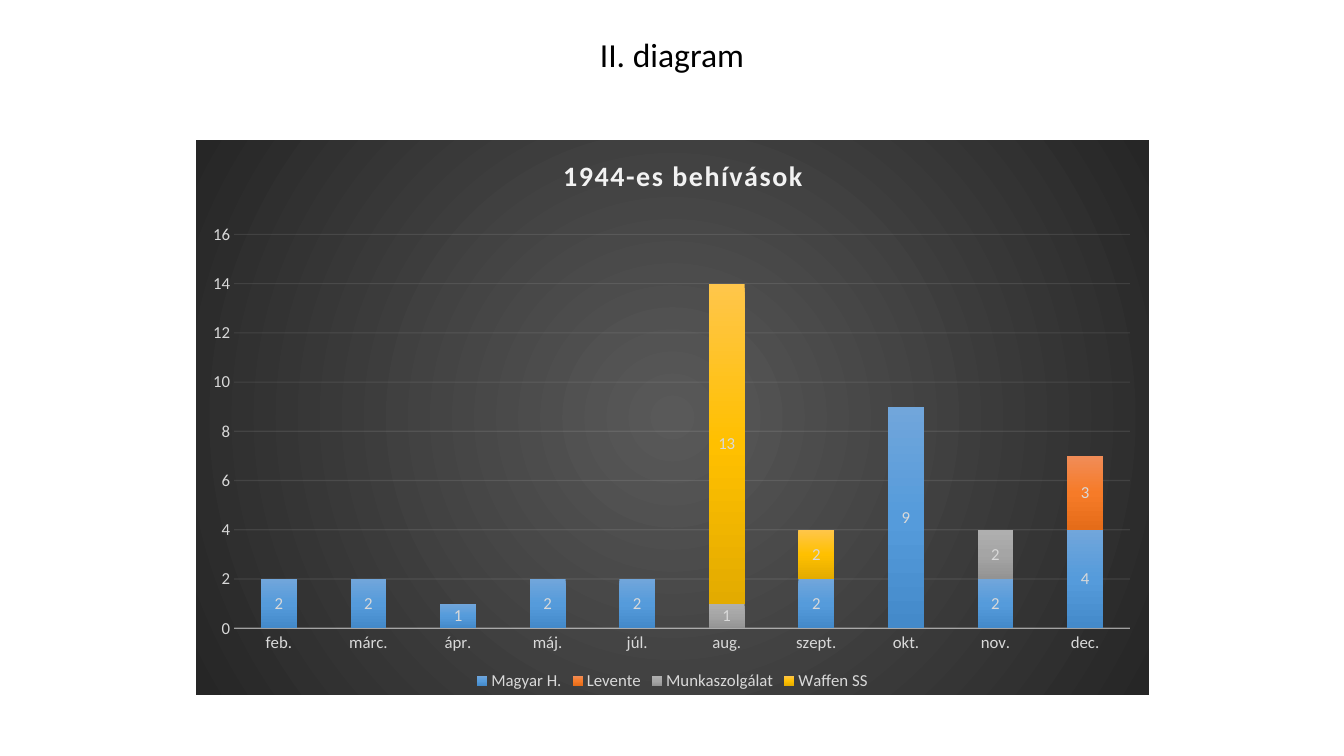
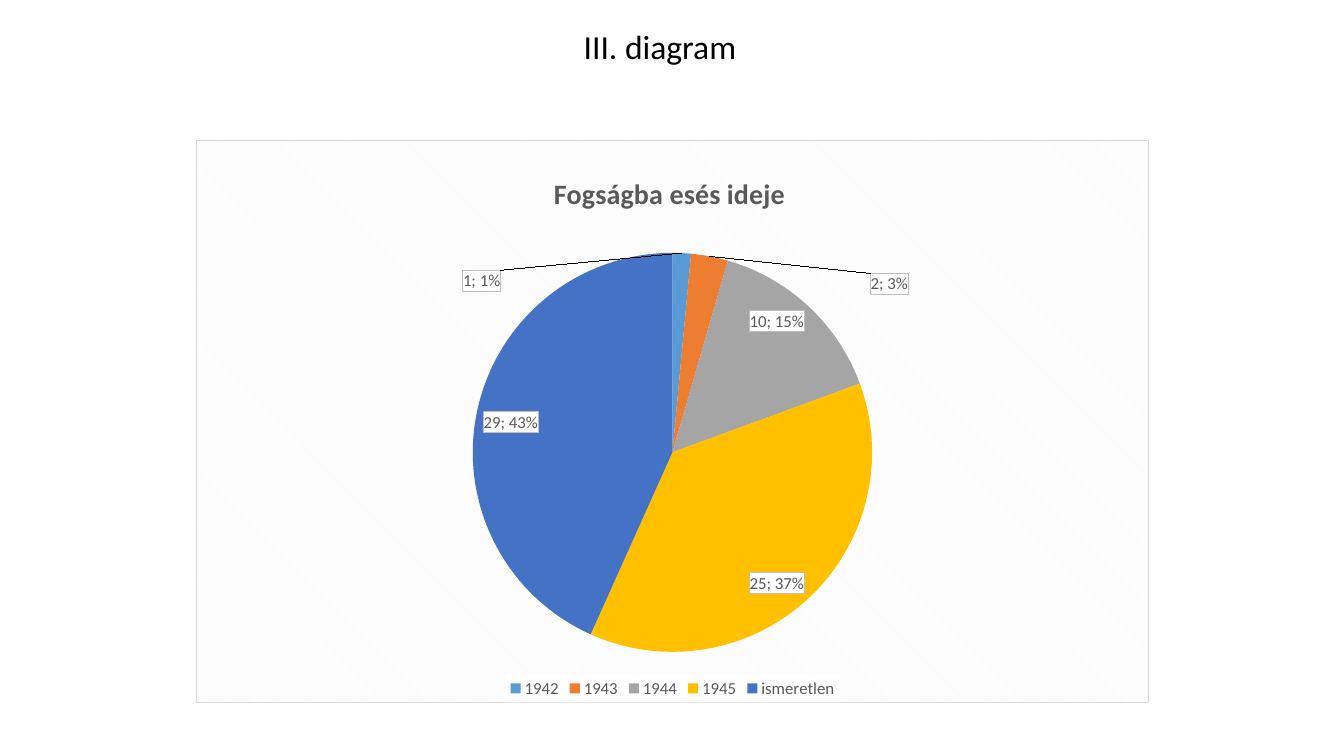
from copy import deepcopy

from lxml import etree
from pptx import Presentation
from pptx import util as u
from pptx.chart.data import CategoryChartData
from pptx.dml.color import RGBColor
from pptx.enum import chart as ch
from pptx.enum import text
from pptx.oxml import parse_xml
from pptx.oxml.ns import nsdecls, qn

SCALE = 12192000 / 1344  # EMU in one px
FONT = "Calibri"
BLACK, WHITE = "000000", "FFFFFF"
PALE, SILVER, GREY = "F2F2F2", "D9D9D9", "595959"


def px(length):
    return u.Emu(round(length * SCALE))


def rgb(code):
    return RGBColor.from_string(code)


def style_font(font, size, color, bold=False):
    font.name, font.size, font.bold = FONT, u.Pt(size), bold
    font.color.rgb = rgb(color)


def style_line(line, color, width, alpha):
    line.color.rgb, line.width = rgb(color), u.Pt(width)
    shade = next(line._get_or_add_ln().iter(qn("a:srgbClr")))
    etree.SubElement(shade, qn("a:alpha")).set("val", str(alpha * 1000))


# Fills and outlines that need XML
def solid(color):
    return f'<a:solidFill><a:srgbClr val="{color}"/></a:solidFill>'


def gradient(stops, direction):
    marks = "".join(f'<a:gs pos="{place * 1000}"><a:srgbClr val="{color}"/></a:gs>'
                    for place, color in stops)
    return f"<a:gradFill><a:gsLst>{marks}</a:gsLst>{direction}</a:gradFill>"


def outline(color):
    return f'<a:ln w="9525">{solid(color)}</a:ln>'


def look(fill, line="<a:ln><a:noFill/></a:ln>"):
    return parse_xml(f'<c:spPr {nsdecls("c", "a")}>{fill}{line}</c:spPr>')


def set_layout(parent, index, modes="", **places):
    """Place a chart part by fractions of the chart's size."""
    for old in parent.findall(qn("c:layout")):
        parent.remove(old)
    values = "".join(f'<c:{key} val="{value}"/>' for key, value in places.items())
    parent.insert(index, parse_xml(
        f'<c:layout {nsdecls("c")}><c:manualLayout>{modes}{values}'
        "</c:manualLayout></c:layout>"))


EDGES = '<c:xMode val="edge"/><c:yMode val="edge"/>'
INNER = '<c:layoutTarget val="inner"/>' + EDGES
DOWN = '<a:lin ang="5400000" scaled="0"/>'
FROM_CENTRE = ('<a:path path="circle"><a:fillToRect l="50000" t="50000" '
               'r="50000" b="50000"/></a:path>')


class Slides:
    def __init__(self):
        self.deck = Presentation()
        self.deck.slide_width, self.deck.slide_height = px(1344), px(756)
        self.page = None

    def add_page(self, title, left, top, width):
        self.page = self.deck.slides.add_slide(self.deck.slide_layouts[5])
        box = self.page.shapes.title
        box.left, box.top, box.width, box.height = px(left), px(top), px(width), px(50)
        frame = box.text_frame
        frame.text = title
        frame.auto_size = text.MSO_AUTO_SIZE.NONE
        frame.vertical_anchor = text.MSO_ANCHOR.MIDDLE
        para = frame.paragraphs[0]
        para.alignment = text.PP_ALIGN.CENTER
        style_font(para.font, 24, BLACK)

    def add_chart(self, kind, height, categories, series, area, color, plot_layout):
        data = CategoryChartData()
        data.categories = categories
        for name, values in series:
            data.add_series(name, values)
        chart = self.page.shapes.add_chart(
            kind, px(196), px(140), px(953), px(height), data).chart
        style_font(chart.font, 10, BLACK)
        chart._chartSpace.find(qn("c:chart")).addnext(area)
        chart.has_legend = True
        chart.legend.position = ch.XL_LEGEND_POSITION.BOTTOM
        chart.legend.include_in_layout = False
        style_font(chart.legend.font, 12, color)
        set_layout(next(chart._chartSpace.iter(qn("c:plotArea"))), 0, INNER, **plot_layout)
        return chart

    def add_chart_title(self, chart, wording, color, x, y, spacing=0):
        title = chart.chart_title
        title.include_in_layout = False
        title.text_frame.text = wording
        span = title.text_frame.paragraphs[0].runs[0]
        style_font(span.font, 20, color, bold=True)
        span.font._element.set("spc", str(spacing))
        set_layout(title._element, 1, EDGES, x=x, y=y)

    def add_labels(self, series, color, position):
        labels = series.data_labels
        labels.show_value = True
        labels.position = position
        style_font(labels.font, 12, color)
        return labels

    def style_axes(self, chart):
        for axis in (chart.category_axis, chart.value_axis):
            axis.major_tick_mark = axis.minor_tick_mark = ch.XL_TICK_MARK.NONE
            style_font(axis.tick_labels.font, 12, SILVER)
        style_line(chart.category_axis.format.line, PALE, 1, 54)
        axis = chart.value_axis
        axis.format.line.fill.background()
        axis.minimum_scale, axis.maximum_scale, axis.major_unit = 0, 16, 2
        style_line(axis.major_gridlines.format.line, PALE, 0.75, 10)

    def box_pie_labels(self, labels, offsets):
        """Frame the labels and move some of them out, with leader lines."""
        labels.show_percentage = True
        root = labels._element
        root.find(qn("c:txPr")).addprevious(look(solid(WHITE), outline("BFBFBF")))
        separator = etree.Element(qn("c:separator"))
        separator.text = "; "
        leader = root.find(qn("c:showLeaderLines"))
        if leader is None:
            leader = etree.SubElement(root, qn("c:showLeaderLines"))
        leader.set("val", "1")
        leader.addprevious(separator)
        shared = [part for part in root if part is not leader]
        for index, (x, y) in enumerate(offsets):
            label = parse_xml(f'<c:dLbl {nsdecls("c")}><c:idx val="{index}"/></c:dLbl>')
            set_layout(label, 1, x=x, y=y)
            label.extend([deepcopy(part) for part in shared])
            root.insert(index, label)


def add_call_ups(slides):
    months = ["feb.", "márc.", "ápr.", "máj.", "júl.",
              "aug.", "szept.", "okt.", "nov.", "dec."]
    forces = [
        ("Magyar H.", {0: 2, 1: 2, 2: 1, 3: 2, 4: 2, 6: 2, 7: 9, 8: 2, 9: 4},
         ("71A6DB", "559BDB", "448ACA")),
        ("Levente", {9: 3}, ("F18C57", "F67B28", "E56C19")),
        ("Munkaszolgálat", {5: 1, 8: 2}, ("AFAFAF", "A5A5A5", "939393")),
        ("Waffen SS", {5: 13, 6: 2}, ("FFC64B", "FFC000", "E3AB00")),
    ]
    slides.add_page("II. diagram", 505, 29, 334)
    chart = slides.add_chart(
        ch.XL_CHART_TYPE.COLUMN_STACKED, 555, months,
        [(name, [counts.get(i) for i in range(len(months))]) for name, counts, _ in forces],
        look(gradient([(0, GREY), (100, "262626")], FROM_CENTRE)), SILVER,
        dict(x=0.04, y=0.17, w=0.94, h=0.71))
    slides.add_chart_title(chart, "1944-es behívások", PALE, 0.38, 0.02, spacing=100)
    slides.style_axes(chart)
    plot = chart.plots[0]
    plot.gap_width, plot.overlap, plot.vary_by_categories = 150, 100, False
    for series, (_, _, colors) in zip(plot.series, forces):
        fill = gradient(zip((0, 50, 100), colors), DOWN)
        old = series._element.get_or_add_spPr()
        old.getparent().replace(old, look(fill))
        slides.add_labels(series, SILVER, ch.XL_LABEL_POSITION.CENTER)


def add_captures(slides):
    slides.add_page("III. diagram", 569, 21, 182)
    hatch = (f'<a:pattFill prst="dkDnDiag"><a:fgClr><a:srgbClr val="{PALE}"/></a:fgClr>'
             f'<a:bgClr><a:srgbClr val="{WHITE}"/></a:bgClr></a:pattFill>')
    chart = slides.add_chart(
        ch.XL_CHART_TYPE.PIE, 563, ["1942", "1943", "1944", "1945", "ismeretlen"],
        [("Series 1", [1, 2, 10, 25, 29])], look(hatch, outline(SILVER)), GREY,
        dict(x=0.29, y=0.2, w=0.42, h=0.71))
    slides.add_chart_title(chart, "Fogságba esés ideje", GREY, 0.37, 0.05)
    chart.legend._element.find(qn("c:txPr")).addprevious(look(solid(WHITE)))
    series = chart.plots[0].series[0]
    for index, color in enumerate(["5B9BD5", "ED7D31", "A5A5A5", "FFC000", "4472C4"]):
        fill = series.points[index].format.fill
        fill.solid()
        fill.fore_color.rgb = rgb(color)
    labels = slides.add_labels(series, GREY, ch.XL_LABEL_POSITION.INSIDE_END)
    slides.box_pie_labels(labels, [(-0.21, 0.02), (0.21, 0.02)])


def main():
    slides = Slides()
    add_call_ups(slides)
    add_captures(slides)
    slides.deck.save("out.pptx")


if __name__ == "__main__":
    main()
